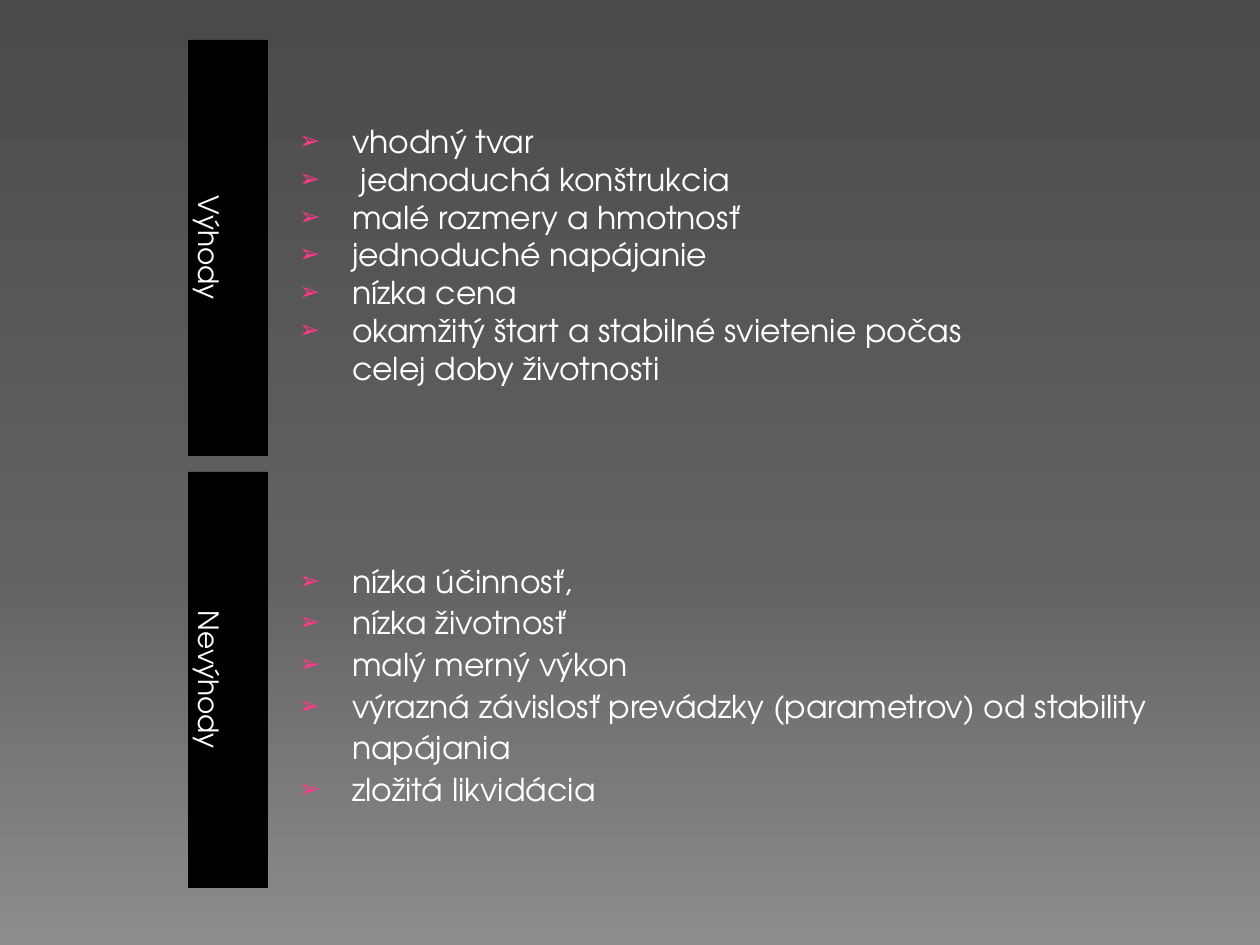
"""Build a slide that lists advantages and disadvantages in two labelled rows."""
import copy

from lxml import etree
from pptx import Presentation
from pptx import util as u
from pptx.dml.color import RGBColor
from pptx.enum import shapes, text
from pptx.oxml.ns import qn

PX_PER_INCH = 126
FONT = "TeX Gyre Adventor"
COLORS = {
    "label": "000000",
    "text": "FFFFFF",
    "bullet": "FF388C",
    "top": "4A4A4A",
    "middle": "626262",
    "bottom": "8C8C8C",
}
ROWS = [
    {
        "label": "Výhody",
        "items": [
            "vhodný tvar",
            " jednoduchá konštrukcia",
            "malé rozmery a hmotnosť",
            "jednoduché napájanie",
            "nízka cena",
            "okamžitý štart a stabilné svietenie počas",
        ],
        "ending": "celej doby životnosti",
        "spacing": 1.0,
        "inset": 82,
    },
    {
        "label": "Nevýhody",
        "items": [
            "nízka účinnosť,",
            "nízka životnosť",
            "malý merný výkon",
            "výrazná závislosť prevádzky (parametrov) od stability napájania",
            "zložitá likvidácia",
        ],
        "ending": None,
        "spacing": 1.1,
        "inset": 86,
    },
]


def px(length):
    return u.Emu(round(length * 914400 / PX_PER_INCH))


def rgb(name):
    return RGBColor.from_string(COLORS[name])


def write(paragraph, words, size=18, align=text.PP_ALIGN.LEFT, spacing=1.0,
          margin=0, indent=0, bullet=None):
    run = paragraph.add_run()
    run.text = words
    run.font.name = FONT
    run.font.size = u.Pt(size)
    run.font.color.rgb = rgb("text")
    paragraph.alignment = align
    paragraph.line_spacing = spacing
    paragraph.space_before = u.Pt(0)
    properties = paragraph._p.get_or_add_pPr()
    properties.set("marL", str(px(margin)))
    properties.set("indent", str(px(indent)))
    if bullet:
        color = etree.SubElement(properties, qn("a:buClr"))
        etree.SubElement(color, qn("a:srgbClr"), val=COLORS["bullet"])
        etree.SubElement(properties, qn("a:buSzPct"), val="80000")
        etree.SubElement(properties, qn("a:buChar"), char=bullet)
    else:
        etree.SubElement(properties, qn("a:buNone"))


class SlideBuilder:
    def __init__(self, slide):
        self.slide = slide

    def background(self, stops):
        fill = self.slide.background.fill
        fill.gradient()
        fill.gradient_angle = 270
        stop_list = self.slide._element.find(".//" + qn("a:gsLst"))
        stop_list.append(copy.deepcopy(stop_list[-1]))
        for stop, (position, name) in zip(fill.gradient_stops, stops):
            stop.position = position
            stop.color.rgb = rgb(name)

    def set_frame(self, shape, insets, anchor):
        frame = shape.text_frame
        frame.auto_size = text.MSO_AUTO_SIZE.NONE
        frame.word_wrap = True
        frame.vertical_anchor = anchor
        frame.margin_left, frame.margin_top, frame.margin_right, frame.margin_bottom = map(px, insets)
        return frame

    def label(self, words, top, height):
        shape = self.slide.shapes.add_shape(
            shapes.MSO_SHAPE.RECTANGLE, px(188), px(top), px(80), px(height))
        shape.shadow.inherit = False
        shape.fill.solid()
        shape.fill.fore_color.rgb = rgb("label")
        shape.line.fill.background()
        frame = self.set_frame(shape, (5, 5, 5, 5), text.MSO_ANCHOR.BOTTOM)
        frame._txBody.bodyPr.set("vert", "vert")
        write(frame.paragraphs[0], words, size=16, align=text.PP_ALIGN.CENTER)

    def bullets(self, index, row, top, height):
        shape = self.slide.placeholders[index]
        shape.left, shape.top = px(278), px(top)
        shape.width, shape.height = px(945), px(height)
        frame = self.set_frame(shape, (12, row["inset"], 12, 6), text.MSO_ANCHOR.TOP)
        for number, item in enumerate(row["items"]):
            paragraph = frame.add_paragraph() if number else frame.paragraphs[0]
            write(paragraph, item, spacing=row["spacing"], margin=62, indent=-53, bullet="➢")
        if row["ending"]:
            write(frame.add_paragraph(), row["ending"], spacing=row["spacing"], margin=62)


def main():
    presentation = Presentation()
    presentation.slide_width, presentation.slide_height = px(1260), px(945)
    layout = presentation.slide_layouts.get_by_name("Two Content")
    slide = presentation.slides.add_slide(layout)
    title = slide.shapes.title._element
    title.getparent().remove(title)

    builder = SlideBuilder(slide)
    builder.background([(0, "top"), (0.6, "middle"), (1, "bottom")])
    for number, row in enumerate(ROWS):
        top = 40 + 432 * number
        builder.label(row["label"], top, 416)
        builder.bullets(1 + number, row, top, 416)
    presentation.save("out.pptx")


if __name__ == "__main__":
    main()
